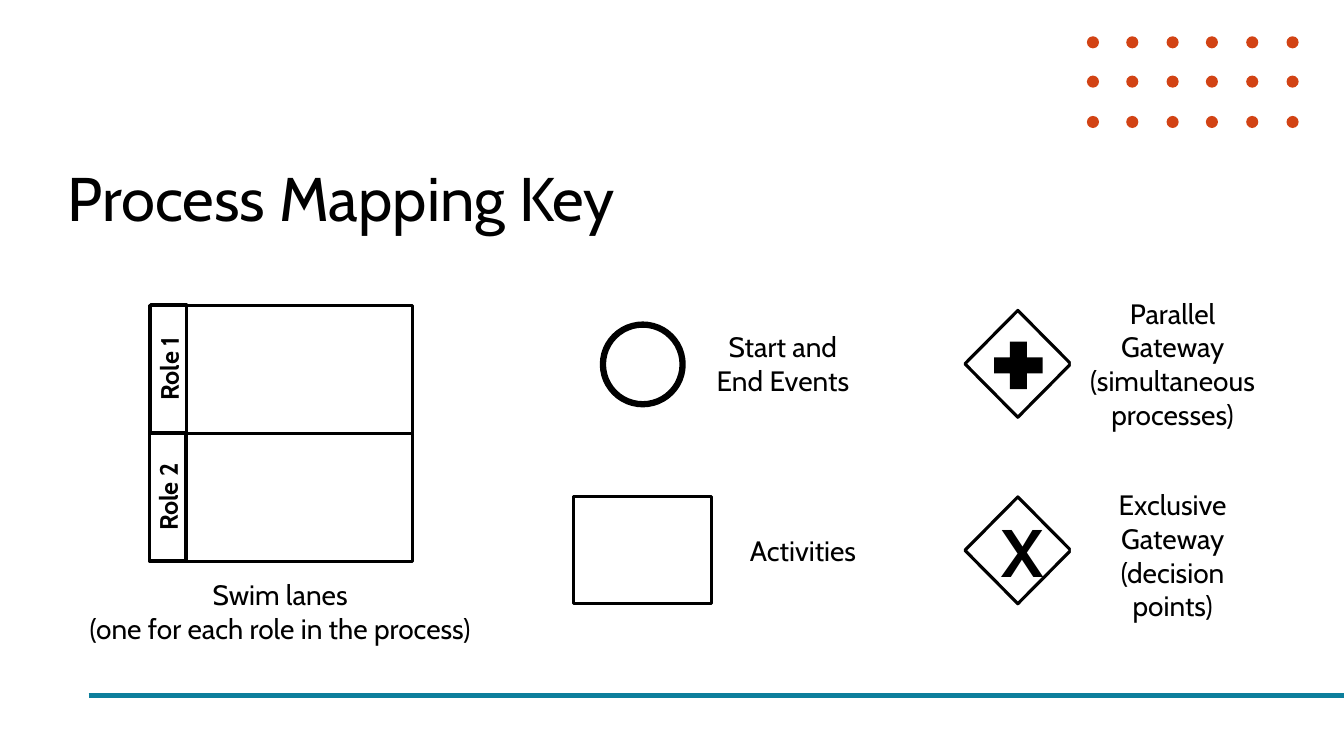
from lxml import etree
from pptx import Presentation
from pptx.dml.color import RGBColor
from pptx.enum.shapes import MSO_CONNECTOR, MSO_SHAPE
from pptx.enum.text import MSO_ANCHOR, MSO_AUTO_SIZE, PP_ALIGN
from pptx.oxml.ns import qn
from pptx.util import Pt

EMU_PER_PX = 9144  # 100 px to the inch
SLIDE_WIDTH, SLIDE_HEIGHT = 1333, 750
TITLE_ONLY = 5
STRAIGHT = MSO_CONNECTOR.STRAIGHT
RECTANGLE, OVAL = MSO_SHAPE.RECTANGLE, MSO_SHAPE.OVAL
DIAMOND, CROSS = MSO_SHAPE.DIAMOND, MSO_SHAPE.CROSS
TOP, MIDDLE = MSO_ANCHOR.TOP, MSO_ANCHOR.MIDDLE
LEFT, CENTER = PP_ALIGN.LEFT, PP_ALIGN.CENTER
NO_AUTO_SIZE = MSO_AUTO_SIZE.NONE

BLACK, WHITE, ORANGE, TEAL = "000000", "FFFFFF", "D24314", "0D7F9C"
OUTLINE = 2.25


def px(*lengths):
    return [length * EMU_PER_PX for length in lengths]


def color(hex_value):
    return RGBColor.from_string(hex_value)


class KeySlide:
    """Holds the style and the current slide."""

    font_name = "Cabin"

    def __init__(self, presentation):
        layout = presentation.slide_layouts[TITLE_ONLY]
        self.slide = presentation.slides.add_slide(layout)

    def set_text(self, shape, text, size, bold=False, align=CENTER, anchor=MIDDLE,
                 spacing=None):
        frame = shape.text_frame
        frame.text = text
        frame.word_wrap = True
        frame.auto_size = NO_AUTO_SIZE
        frame.vertical_anchor = anchor
        font_format = {"name": self.font_name, "size": Pt(size), "bold": bold}
        for paragraph in frame.paragraphs:
            paragraph.alignment = align
            paragraph.line_spacing = spacing
            for name, value in font_format.items():
                setattr(paragraph.font, name, value)
            paragraph.font.color.rgb = color(BLACK)

    def title(self, text, left, top, width, height):
        title = self.slide.shapes.title
        sides = ("left", "top", "width", "height")
        for side, value in zip(sides, px(left, top, width, height)):
            setattr(title, side, value)
        self.set_text(title, text, 44, align=LEFT, spacing=0.9)

    def shape(self, kind, left, top, width, height, fill=WHITE, outline=None):
        """Add a preset shape; outline is its line width in points."""
        shape = self.slide.shapes.add_shape(kind, *px(left, top, width, height))
        shape.shadow.inherit = False
        if fill:
            shape.fill.solid()
            shape.fill.fore_color.rgb = color(fill)
        else:
            shape.fill.background()
        if outline:
            shape.line.color.rgb = color(BLACK)
            shape.line.width = Pt(outline)
        else:
            shape.line.fill.background()
        return shape

    def caption(self, text, left, top, width, height):
        box = self.shape(RECTANGLE, left, top, width, height)
        self.set_text(box, text, 20, anchor=TOP)

    def gateway(self, top):
        return self.shape(DIAMOND, 957, top, 105, 106, outline=OUTLINE)

    def role(self, text, left, top):
        """Add a lane label, turned to read upwards."""
        label = self.shape(RECTANGLE, left, top, 127, 36, outline=OUTLINE)
        label.rotation = 270
        self.set_text(label, text, 18, bold=True)

    def rule(self, left, right, y):
        line = self.slide.shapes.add_connector(STRAIGHT, *px(left, y, right, y))
        line.line.color.rgb = color(TEAL)
        line.line.width = Pt(3)
        etree.SubElement(line._element.spPr, qn("a:effectLst"))

    def dot_grid(self, left, top, columns, rows):
        for row in range(rows):
            for column in range(columns):
                # The dots are 39.6 px apart.
                x, y = (index * 198 // 5 for index in (column, row))
                self.shape(OVAL, left + x, top + y, 12, 12, fill=ORANGE)


def main():
    presentation = Presentation()
    presentation.slide_width, presentation.slide_height = px(SLIDE_WIDTH, SLIDE_HEIGHT)
    key = KeySlide(presentation)

    key.rule(88, SLIDE_WIDTH, 690)
    key.dot_grid(1078, 36, columns=6, rows=3)
    key.title("Process Mapping Key", 57, 127, 1150, 145)

    key.shape(OVAL, 598, 322, 79, 79, fill=None, outline=4.5)
    key.caption("Start and End Events", 699, 322, 155, 77)
    key.shape(RECTANGLE, 569, 493, 137, 106, outline=OUTLINE)
    key.caption("Activities", 719, 524, 155, 44)

    key.gateway(308)
    plus = key.shape(CROSS, 986, 339, 48, 47, fill=BLACK)
    plus.adjustments[0] = 0.33
    key.caption("Parallel Gateway (simultaneous processes)", 1062, 289, 202, 145)
    key.set_text(key.gateway(493), "X", 48, bold=True)
    key.caption("Exclusive Gateway (decision points)", 1062, 479, 202, 145)

    for lane_top in (303, 430):
        key.shape(RECTANGLE, 148, lane_top, 261, 127, outline=OUTLINE)
    key.role("Role 1", 104, 348)
    key.role("Role 2", 103, 475)
    key.caption("Swim lanes\n(one for each role in the process)", 78, 568, 400, 77)

    presentation.save("out.pptx")


if __name__ == "__main__":
    main()
